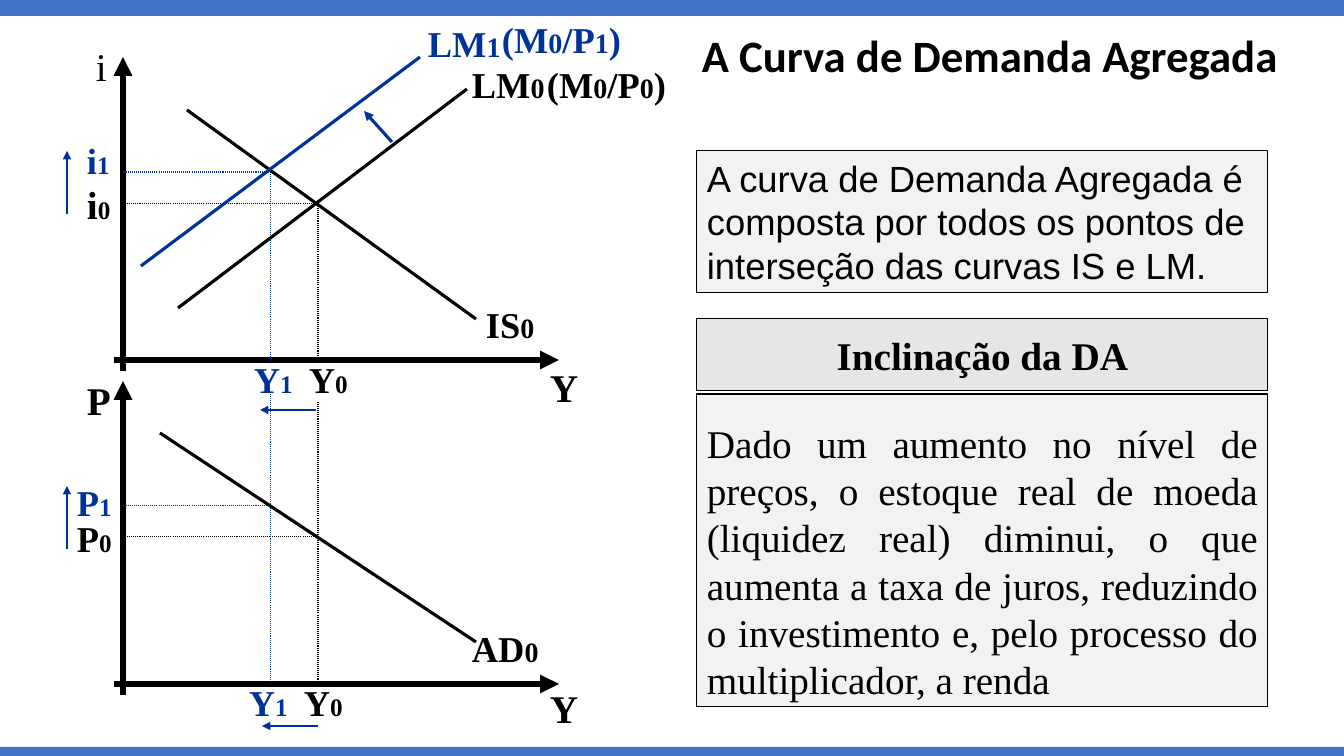
from itertools import groupby

from lxml import etree
from pptx import Presentation
from pptx import util as u
from pptx.dml.color import RGBColor
from pptx.enum import dml, shapes, text
from pptx.oxml.ns import qn

WIDTH, HEIGHT = 1344, 756
EMU_PER_PX = 12192000 / WIDTH

BLACK = RGBColor(0x00, 0x00, 0x00)
BLUE = RGBColor(0x00, 0x33, 0x99)
BAR = RGBColor(0x44, 0x72, 0xC4)
HEADER = RGBColor(0xE7, 0xE6, 0xE6)
PANEL = RGBColor(0xF2, 0xF2, 0xF2)

AXIS_X, Y0_X, Y1_X = 123, 318, 271
BOX_X, BOX_WIDTH = 697, 571


def px(value):
    return u.Emu(round(value * EMU_PER_PX))


def write(shape, content, size=28, color=BLACK, bold=False, font="Times New Roman",
          align=text.PP_ALIGN.LEFT, anchor=text.MSO_ANCHOR.TOP, spacing=None, digit_size=None):
    """Fill a shape with one paragraph; digits take digit_size when it is given."""
    frame = shape.text_frame
    frame.word_wrap = True
    frame.vertical_anchor = anchor
    paragraph = frame.paragraphs[0]
    paragraph.alignment = align
    paragraph.line_spacing = spacing
    for is_digit, characters in groupby(content, str.isdigit):
        run = paragraph.add_run()
        run.text = "".join(characters)
        run.font.name = font
        run.font.size = u.Pt(digit_size if is_digit and digit_size else size)
        run.font.bold = bold
        run.font.color.rgb = color


class Canvas:
    def __init__(self, slide, bold=True, label_size=26):
        self.slide = slide
        self.bold = bold
        self.label_size = label_size

    def box(self, x, y, width, height, fill, line=None):
        shape = self.slide.shapes.add_shape(
            shapes.MSO_SHAPE.RECTANGLE, px(x), px(y), px(width), px(height))
        shape.shadow.inherit = False
        shape.fill.solid()
        shape.fill.fore_color.rgb = fill
        if line is None:
            shape.line.fill.background()
        else:
            shape.line.color.rgb = line
            shape.line.width = u.Pt(0.75)
        return shape

    def textbox(self, x, y, width, height):
        return self.slide.shapes.add_textbox(px(x), px(y), px(width), px(height))

    def label(self, content, x, y, width=84, color=BLACK, size=None, bold=None, digit_size=18):
        write(self.textbox(x, y, width, 55), content, size=size or self.label_size, color=color,
              bold=self.bold if bold is None else bold, digit_size=digit_size)

    def line(self, start, end, color=BLACK, weight=2.25, dotted=False, arrow=False):
        connector = self.slide.shapes.add_connector(
            shapes.MSO_CONNECTOR.STRAIGHT, *map(px, (*start, *end)))
        connector.line.color.rgb = color
        connector.line.width = u.Pt(weight)
        if dotted:
            connector.line.dash_style = dml.MSO_LINE.ROUND_DOT
        if arrow:
            etree.SubElement(connector.line._get_or_add_ln(), qn("a:tailEnd"), type="triangle")
        etree.SubElement(connector._element.spPr, qn("a:effectLst"))

    def guides(self, x, y, gap_end, base, color):
        """Dotted lines from a curve point to the price axis and down to the output axis."""
        self.line((x, y), (AXIS_X, y), color, 0.75, dotted=True)
        self.line((x, gap_end), (x, base), color, 0.75, dotted=True)

    def diagram(self, top, levels, guide_tops, rise_y, fall):
        """Axes, guides for points 0 and 1, and the arrows of change."""
        base = top + 303
        self.line((AXIS_X, top + 314), (AXIS_X, top), weight=4.5, arrow=True)
        self.line((114, base), (559, base), weight=4.5, arrow=True)
        for x, level, guide_top, color in zip((Y0_X, Y1_X), levels, guide_tops, (BLACK, BLUE)):
            self.guides(x, level, guide_top, base, color)
        self.line((67, rise_y + 63), (67, rise_y), BLUE, 1.5, arrow=True)
        fall_x, fall_y = fall
        self.line((fall_x, fall_y), (fall_x - 56, fall_y), BLUE, 1.5, arrow=True)


def main():
    presentation = Presentation()
    presentation.slide_width, presentation.slide_height = px(WIDTH), px(HEIGHT)
    slide = presentation.slides.add_slide(presentation.slide_layouts[6])
    canvas = Canvas(slide)

    canvas.box(0, 0, WIDTH, 16, BAR)
    canvas.box(0, 747, WIDTH, 9, BAR)

    canvas.diagram(57, levels=(204, 172), guide_tops=(204, 172), rise_y=151, fall=(316, 410))
    canvas.diagram(381, levels=(537, 506), guide_tops=(402, 392), rise_y=486, fall=(318, 726))

    canvas.line((187, 110), (476, 319))
    canvas.line((178, 308), (467, 89))
    canvas.line((160, 433), (476, 642))
    canvas.line((141, 266), (420, 57), BLUE)
    canvas.line((392, 142), (364, 111), BLUE, arrow=True)

    for content, x, y, width, color in (
            ("AD0", 462, 621, 93, BLACK), ("IS0", 476, 297, 121, BLACK),
            ("LM0", 462, 57, 102, BLACK), ("(M0/P0)", 537, 57, 214, BLACK),
            ("LM1", 418, 16, 102, BLUE), ("(M0/P1)", 492, 12, 214, BLUE)):
        canvas.label(content, x, y, width, color, digit_size=20)

    canvas.label("i", 86, 37, size=28, bold=False)
    canvas.label("P", 77, 371, size=28)
    canvas.label("i0", 77, 175, size=28)
    canvas.label("i1", 77, 133, color=BLUE)
    canvas.label("P0", 67, 511)
    canvas.label("P1", 67, 475, color=BLUE)
    for x, y, axis_y in ((299, 352, 358), (294, 675, 679)):
        canvas.label("Y0", x, y)
        canvas.label("Y1", x - 55, y, color=BLUE)
        canvas.label("Y", 540, axis_y, size=28)

    write(canvas.textbox(692, 0, 651, 117), "A Curva de Demanda Agregada", size=32, bold=True,
          font="Calibri", anchor=text.MSO_ANCHOR.MIDDLE, spacing=0.85)
    write(canvas.box(BOX_X, 151, BOX_WIDTH, 142, PANEL, BLACK),
          "A curva de Demanda Agregada é composta por todos os pontos de interseção "
          "das curvas IS e LM.", size=26, font="Arial")
    write(canvas.box(BOX_X, 319, BOX_WIDTH, 72, HEADER, BLACK), "Inclinação da DA", bold=True,
          align=text.PP_ALIGN.CENTER, anchor=text.MSO_ANCHOR.MIDDLE)
    write(canvas.box(BOX_X, 394, BOX_WIDTH, 313, PANEL, BLACK),
          "Dado um aumento no nível de preços, o estoque real de moeda (liquidez real) "
          "diminui, o que aumenta a taxa de juros, reduzindo o investimento e, pelo "
          "processo do multiplicador, a renda",
          align=text.PP_ALIGN.JUSTIFY, anchor=text.MSO_ANCHOR.BOTTOM)

    presentation.save("out.pptx")


if __name__ == "__main__":
    main()
